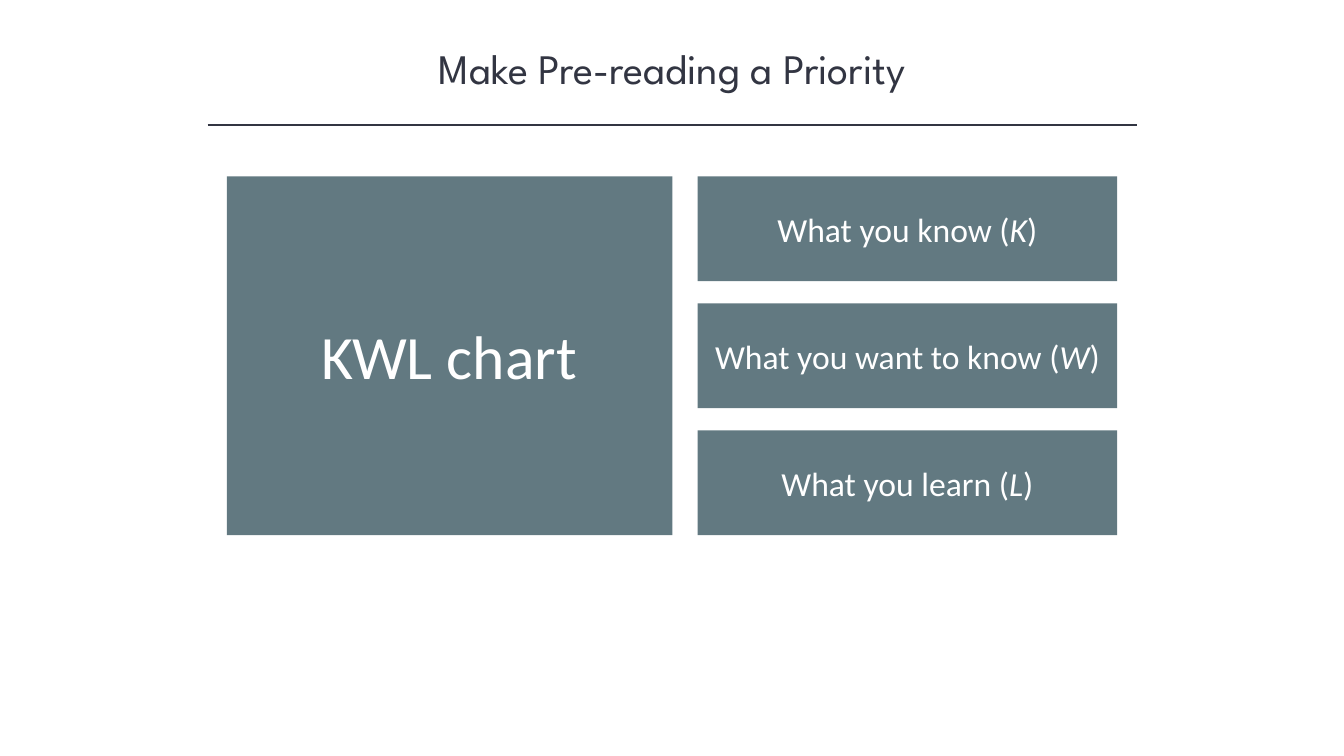
from lxml import etree
from pptx import Presentation
from pptx.dml.color import RGBColor
from pptx.enum.shapes import MSO_CONNECTOR, MSO_SHAPE
from pptx.enum.text import MSO_ANCHOR, PP_ALIGN
from pptx.oxml.ns import qn
from pptx.util import Inches, Pt

RECTANGLE = MSO_SHAPE.RECTANGLE
STRAIGHT = MSO_CONNECTOR.STRAIGHT
MIDDLE = MSO_ANCHOR.MIDDLE
TOP = MSO_ANCHOR.TOP
CENTER = PP_ALIGN.CENTER

INK = RGBColor(0x32, 0x35, 0x42)
SLATE = RGBColor(0x62, 0x79, 0x81)
WHITE = RGBColor(0xFF, 0xFF, 0xFF)


def write_text(shape, *parts, size=24, font="Calibri", color=WHITE, anchor=MIDDLE):
    """Fill a shape with one centred paragraph of (text, italic) parts."""
    frame = shape.text_frame
    frame.word_wrap = True
    frame.vertical_anchor = anchor
    paragraph = frame.paragraphs[0]
    paragraph.alignment = CENTER
    for text, italic in parts:
        run = paragraph.add_run()
        run.text = text
        run.font.size = Pt(size)
        run.font.name = font
        run.font.italic = italic
        run.font.color.rgb = color


class SlideBuilder:
    def __init__(self, slide):
        self.slide = slide
        self.panel_color = SLATE
        self.line_color = INK

    def label(self, left, top, width, height, text, **style):
        box = self.slide.shapes.add_textbox(
            Inches(left), Inches(top), Inches(width), Inches(height))
        write_text(box, (text, False), **style)

    def rule(self, left, right, y):
        line = self.slide.shapes.add_connector(
            STRAIGHT, Inches(left), Inches(y), Inches(right), Inches(y))
        line.line.color.rgb = self.line_color
        line.line.width = Pt(1)
        etree.SubElement(line.element.spPr, qn("a:effectLst"))

    def panel(self, left, top, width, height):
        shape = self.slide.shapes.add_shape(
            RECTANGLE, Inches(left), Inches(top), Inches(width), Inches(height))
        shape.shadow.inherit = False
        shape.fill.solid()
        shape.fill.fore_color.rgb = self.panel_color
        shape.line.fill.background()
        return shape


def main():
    presentation = Presentation()
    presentation.slide_width = Inches(13.33)
    presentation.slide_height = Inches(7.5)
    slide = presentation.slides.add_slide(presentation.slide_layouts[6])
    builder = SlideBuilder(slide)

    # Title and rule
    builder.label(1.67, 0.37, 10, 0.61, "Make Pre-reading a Priority",
                  size=30, font="League Spartan", color=INK, anchor=TOP)
    builder.rule(2.06, 11.28, 1.24)

    # Chart name
    builder.panel(2.25, 1.75, 4.42, 3.56)
    builder.label(2.62, 3.1, 3.67, 0.84, "KWL chart", size=44)

    # The three KWL steps
    steps = [("What you know", "K"), ("What you want to know", "W"),
             ("What you learn", "L")]
    for index, (step, letter) in enumerate(steps):
        panel = builder.panel(6.92, 1.75 + index * 1.26, 4.16, 1.04)
        write_text(panel, (f"{step} (", False), (letter, True), (")", False))

    presentation.save("out.pptx")


if __name__ == "__main__":
    main()
